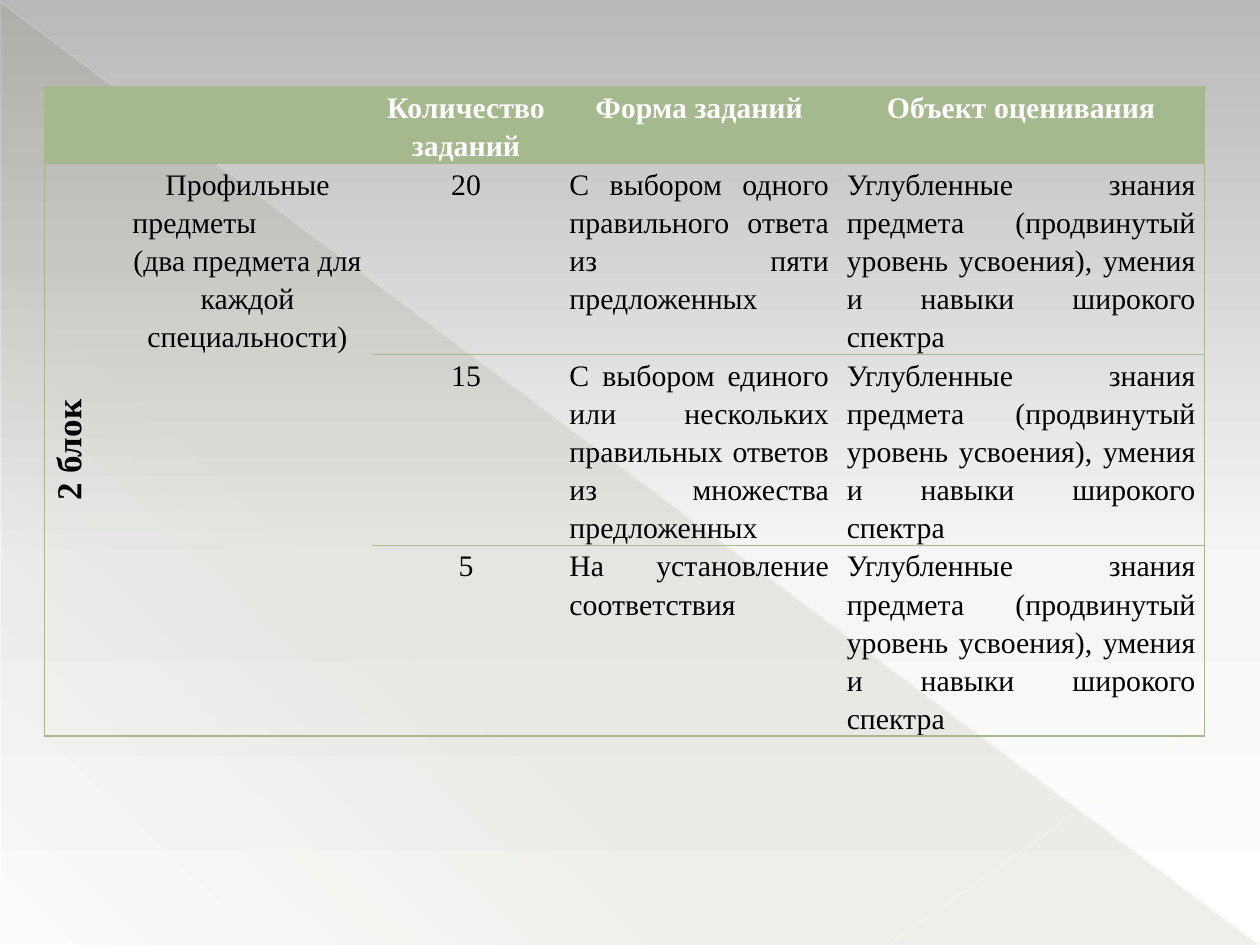
from lxml.etree import SubElement as Sub, Element
from pptx import Presentation
from pptx.dml.color import RGBColor as RGB
from pptx.enum.shapes import MSO_CONNECTOR as Conn, MSO_SHAPE as Form
from pptx.enum.text import PP_ALIGN as Align
from pptx.oxml.ns import qn
from pptx.util import Cm, Pt

FONT = "Times New Roman"
GREEN = RGB(0xA5, 0xB8, 0x8E)
OLIVE = RGB(0x44, 0x4D, 0x26)
CREAM = RGB(0xFF, 0xFD, 0xE3)
GREY = RGB(0xB9, 0xB9, 0xB9)
PALE = RGB(0xF6, 0xF6, 0xF6)
WHITE = RGB(0xFF, 0xFF, 0xFF)
BLACK = RGB(0, 0, 0)

# Content
HEADS = ["", "", "Количество заданий", "Форма заданий", "Объект оценивания"]
BLOCK = "2 блок"
SUBJECT = [("Профильные", Align.CENTER), ("предметы", Align.LEFT),
           ("(два предмета для каждой специальности)", Align.CENTER)]
GOAL = ("Углубленные знания предмета (продвинутый уровень усвоения), "
        "умения и навыки широкого спектра")
TASKS = [
    ("20", "С выбором одного правильного ответа из пяти предложенных"),
    ("15", "С выбором единого или нескольких правильных ответов "
           "из множества предложенных"),
    ("5", "На установление соответствия"),
]
COLS = [1.6, 5, 3.81, 5.59, 7.39]
ROWS = [1.55, 3.84, 3.84, 3.84]

# Gradient stops: position, colour, opacity (all in percent)
SKY = [(0, GREY, 100), (60, PALE, 100), (100, WHITE, 100)]
SHADE = [(0, OLIVE, 10), (70, OLIVE, 8), (100, OLIVE, 1)]
# Lines: start, end, width, opacity
RAYS = [((0, 0.03), (25.37, 19.02), 0.39, 35),
        ((25.4, 13.74), (17.96, 19.02), 0.47, 45)]


def fade(color, alpha):
    Sub(color, qn("a:alpha"), val=str(alpha * 1000))


def blend(owner, fill, stops, angle):
    fill.gradient()
    grad = owner.element.find(".//" + qn("a:gradFill"))
    for kid in list(grad):
        grad.remove(kid)
    group = Sub(grad, qn("a:gsLst"))
    for pos, color, alpha in stops:
        stop = Sub(group, qn("a:gs"), pos=str(pos * 1000))
        fade(Sub(stop, qn("a:srgbClr"), val=str(color)), alpha)
    Sub(grad, qn("a:lin"), ang=str(angle * 60000), scaled="0")


def write(cell, text, size=17, color=BLACK, bold=False, align=Align.CENTER):
    """Fill a cell with a string or with (string, alignment) paragraphs."""
    parts = [(text, align)] if isinstance(text, str) else text
    frame = cell.text_frame
    for i, (words, side) in enumerate(parts):
        par = frame.add_paragraph() if i else frame.paragraphs[0]
        par.alignment, par.line_spacing = side, 1.15
        run = par.add_run()
        run.text = words
        font = run.font
        font.name, font.size, font.bold = FONT, Pt(size), bold
        font.color.rgb = color


def edge(cell, sides):
    props = cell._tc.get_or_add_tcPr()
    for i, side in enumerate("LRTB"):
        line = Element(qn("a:ln" + side), w=str(Pt(0.75)))
        if side in sides:
            solid = Sub(line, qn("a:solidFill"))
            Sub(solid, qn("a:srgbClr"), val=str(GREEN))
        else:
            Sub(line, qn("a:noFill"))
        props.insert(i, line)


deck = Presentation()
deck.slide_width, deck.slide_height = Cm(25.4), Cm(19.05)
slide = deck.slides.add_slide(deck.slide_layouts[6])
shapes = slide.shapes

# Backdrop
blend(slide, slide.background.fill, SKY, 90)
wedge = shapes.add_shape(Form.RIGHT_TRIANGLE, Cm(0.03), Cm(0.05), Cm(25.35), Cm(19))
wedge.shadow.inherit = False
wedge.line.fill.background()
blend(wedge, wedge.fill, SHADE, 133)
for start, end, width, alpha in RAYS:
    ray = shapes.add_connector(Conn.STRAIGHT, *map(Cm, start + end))
    ray.line.width = Pt(width)
    ray.line.color.rgb = CREAM
    fade(ray.element.find(".//" + qn("a:srgbClr")), alpha)
    Sub(ray.element.spPr, qn("a:effectLst"))

# Table grid
table = shapes.add_table(len(ROWS), len(COLS), Cm(0.89), Cm(1.75),
                         Cm(sum(COLS)), Cm(sum(ROWS))).table
table.horz_banding = False
for col, width in zip(table.columns, COLS):
    col.width = Cm(width)
for row, height in zip(table.rows, ROWS):
    row.height = Cm(height)
for c in (0, 1):
    table.cell(1, c).merge(table.cell(3, c))

# Cell borders, fills and margins
last = len(COLS) - 1
for r in range(len(ROWS)):
    for c in range(len(COLS)):
        cell = table.cell(r, c)
        sides = "L" if c == 0 else "R" if c == last else ""
        if c > 1 or r < 2:
            sides += "T"
        if c > 1 or r != 2:
            sides += "B"
        edge(cell, sides)
        if r:
            cell.fill.background()
        else:
            cell.fill.solid()
            cell.fill.fore_color.rgb = GREEN
        cell.margin_left = cell.margin_right = Cm(0.18)
        cell.margin_top = cell.margin_bottom = 0

# Cell text
for c, head in enumerate(HEADS):
    if head:
        write(table.cell(0, c), head, color=WHITE, bold=True)
block = table.cell(1, 0)
write(block, BLOCK, size=20, bold=True)
block._tc.get_or_add_tcPr().set("vert", "vert270")
write(table.cell(1, 1), SUBJECT)
for r, (count, kind) in enumerate(TASKS, 1):
    write(table.cell(r, 2), count)
    for c, text in ((3, kind), (4, GOAL)):
        write(table.cell(r, c), text, align=Align.JUSTIFY)

deck.save("out.pptx")
